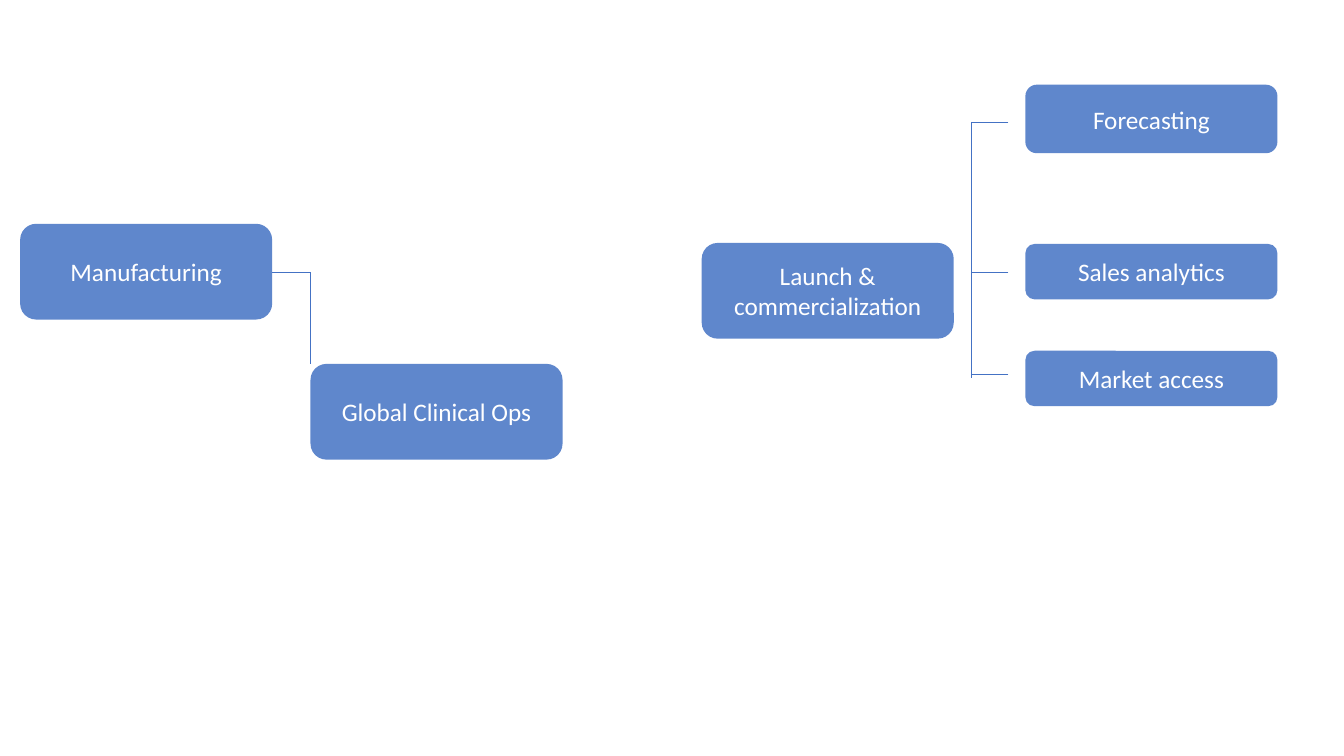
from lxml import etree
from pptx import Presentation
from pptx.dml.color import RGBColor
from pptx.enum.shapes import MSO_CONNECTOR, MSO_SHAPE
from pptx.enum.text import MSO_ANCHOR, PP_ALIGN
from pptx.oxml.ns import qn
from pptx.util import Inches, Pt

COLORS = {"blue": "4472C4", "white": "FFFFFF"}
BOX_W, TALL, MID, LOW = 2.5, 0.95, 0.68, 0.55

# Columns of boxes, and the vertical lines between them
MAKING_X, CLINICAL_X, LAUNCH_X, TASK_X = 0.2, 3.08, 6.96, 10.17
TRUNK_X, BRANCH_END = 9.63, 10
MAKING_Y, CLINICAL_Y = 2.22, 3.61
MAKING_MID = 2.7
BRANCHES = [1.21, 2.7, 3.71]

prs = Presentation()
prs.slide_width, prs.slide_height = Inches(13.33), Inches(7.5)
s = prs.slides.add_slide(prs.slide_layouts[6])

# Boxes
boxes = [
    ("Manufacturing", MAKING_X, MAKING_Y, TALL),
    ("Global Clinical Ops", CLINICAL_X, CLINICAL_Y, TALL),
    ("Launch & commercialization", LAUNCH_X, 2.41, TALL),
    ("Forecasting", TASK_X, 0.84, MID),
    ("Sales analytics", TASK_X, 2.42, LOW),
    ("Market access", TASK_X, 3.48, LOW),
]
for label, x, y, h in boxes:
    sp = s.shapes.add_shape(MSO_SHAPE.ROUNDED_RECTANGLE, Inches(x), Inches(y),
                            Inches(BOX_W), Inches(h))
    sp.shadow.inherit = False
    sp.line.fill.background()
    sp.fill.solid()
    sp.fill.fore_color.rgb = RGBColor.from_string(COLORS["blue"])
    rgb = sp._element.spPr.find(qn("a:solidFill")).find(qn("a:srgbClr"))
    etree.SubElement(rgb, qn("a:alpha")).set("val", "85000")
    tf = sp.text_frame
    tf.word_wrap = True
    tf.vertical_anchor = MSO_ANCHOR.MIDDLE
    tf.text = label
    p = tf.paragraphs[0]
    p.alignment = PP_ALIGN.CENTER
    r = p.runs[0]
    r.font.name, r.font.size = "Calibri", Pt(18)
    r.font.color.rgb = RGBColor.from_string(COLORS["white"])

# Elbow on the left, trunk and branches on the right
lines = [
    (CLINICAL_X, MAKING_MID, MAKING_X + BOX_W, MAKING_MID),
    (CLINICAL_X, MAKING_MID, CLINICAL_X, CLINICAL_Y),
    (TRUNK_X, BRANCHES[0], TRUNK_X, 3.75),
]
lines += [(BRANCH_END, y, TRUNK_X, y) for y in BRANCHES]
for ends in lines:
    c = s.shapes.add_connector(MSO_CONNECTOR.STRAIGHT, *map(Inches, ends))
    c.line.color.rgb = RGBColor.from_string(COLORS["blue"])
    c.line.width = Pt(0.5)
    etree.SubElement(c._element.spPr, qn("a:effectLst"))

prs.save("out.pptx")
